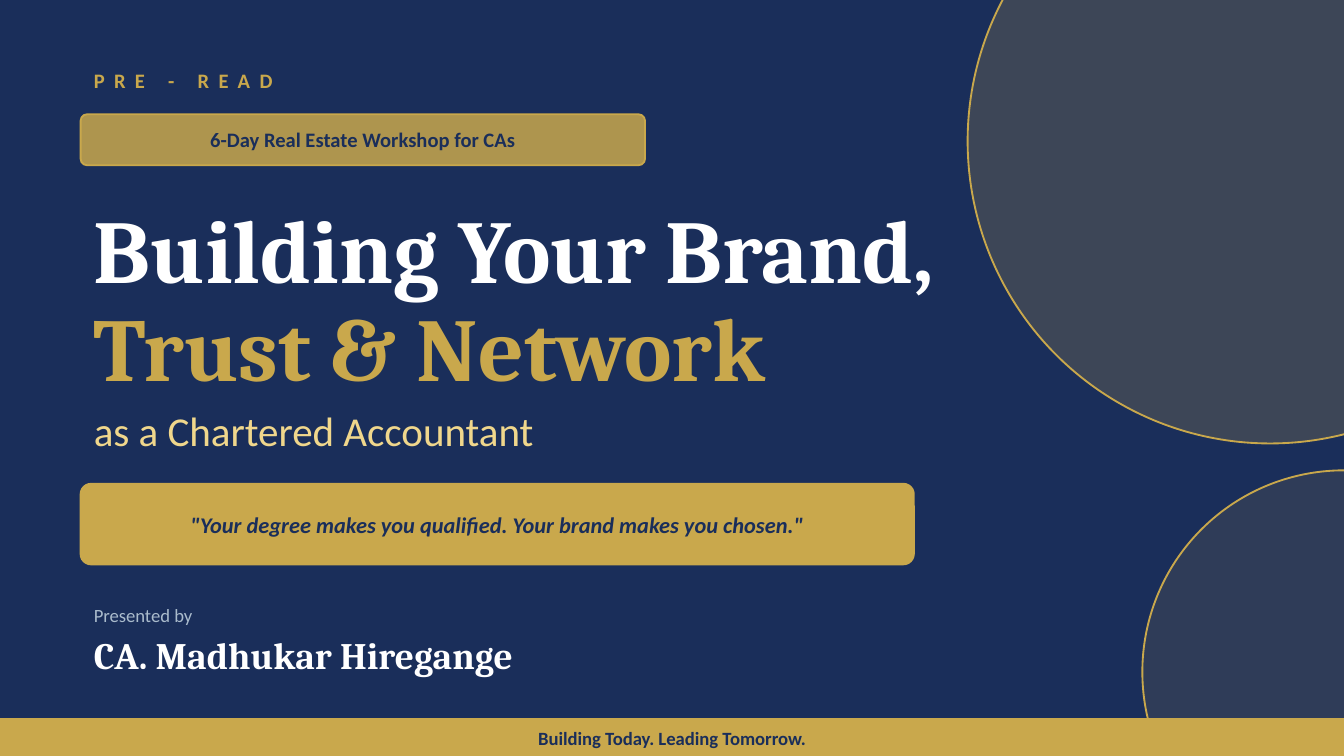
from lxml import etree
from pptx import Presentation
from pptx.dml.color import RGBColor
from pptx.enum.shapes import MSO_SHAPE
from pptx.enum.text import MSO_ANCHOR, PP_ALIGN
from pptx.oxml.ns import qn
from pptx.util import Pt

OVAL, ROUND, RECT = MSO_SHAPE.OVAL, MSO_SHAPE.ROUNDED_RECTANGLE, MSO_SHAPE.RECTANGLE
MIDDLE, LEFT, CENTER = MSO_ANCHOR.MIDDLE, PP_ALIGN.LEFT, PP_ALIGN.CENTER
SCALE = 4572
WIDE, HIGH = 2000, 1125
EDGE = 120
SANS, SERIF = "Calibri", "Cambria"
COLORS = {
    "navy": "1A2E5A",
    "gold": "C9A84C",
    "cream": "F0D78C",
    "white": "FFFFFF",
    "mist": "AABBCC",
}


def px(*nums):
    return [round(num * SCALE) for num in nums]


def tint(name):
    return RGBColor.from_string(COLORS[name])


def add_shape(slide, kind, box, alpha=100, round_by=None):
    shape = slide.shapes.add_shape(kind, *px(*box))
    shape.shadow.inherit = False
    shape.fill.solid()
    shape.fill.fore_color.rgb = tint("gold")
    shape.line.color.rgb = tint("gold")
    shape.line.width = Pt(1)
    if round_by is not None:
        shape.adjustments[0] = round_by
    if alpha < 100:
        color = shape.fill._xPr.find(qn("a:solidFill"))[0]
        etree.SubElement(color, qn("a:alpha")).set("val", str(alpha * 1000))


def add_text(slide, box, text, size, color, face=SANS, align=LEFT, inset=True, gap=0, **style):
    frame = slide.shapes.add_textbox(*px(*box)).text_frame
    frame.word_wrap = True
    frame.vertical_anchor = MIDDLE
    if not inset:
        for side in ("left", "top", "right", "bottom"):
            setattr(frame, f"margin_{side}", 0)
    para = frame.paragraphs[0]
    para.alignment = align
    run = para.add_run()
    run.text = text
    for key, value in {"name": face, "size": Pt(size), **style}.items():
        setattr(run.font, key, value)
    run.font.color.rgb = tint(color)
    if gap:
        run.font._element.set("spc", str(gap * 100))


def add_band(slide, kind, box, text, size, alpha=100, round_by=None, **style):
    add_shape(slide, kind, box, alpha, round_by)
    add_text(slide, box, text, size, "navy", align=CENTER, inset=False, bold=True, **style)


def main():
    deck = Presentation()
    deck.slide_width, deck.slide_height = px(WIDE, HIGH)
    slide = deck.slides.add_slide(deck.slide_layouts[6])
    slide.background.fill.solid()
    slide.background.fill.fore_color.rgb = tint("navy")

    add_shape(slide, OVAL, (1440, -240, 900, 900), alpha=20)
    add_shape(slide, OVAL, (1700, 700, 600, 600), alpha=12)

    add_text(slide, (EDGE, 90, 700, 60), "PRE - READ", 11, "gold", gap=5, bold=True)
    add_band(slide, ROUND, (EDGE, 170, 840, 76), "6-Day Real Estate Workshop for CAs", 11,
             alpha=85, round_by=0.13)

    titles = (("Building Your Brand,", "white"), ("Trust & Network", "gold"))
    for row, (text, color) in enumerate(titles):
        add_text(slide, (EDGE, 290 + 146 * row, 1600, 156), text, 48, color, SERIF, bold=True)
    add_text(slide, (EDGE, 590, 1600, 100), "as a Chartered Accountant", 22, "cream")

    add_band(slide, ROUND, (EDGE, 720, 1240, 120),
             '"Your degree makes you qualified. Your brand makes you chosen."', 12,
             round_by=0.13, italic=True)

    add_text(slide, (EDGE, 890, 800, 50), "Presented by", 10, "mist")
    add_text(slide, (EDGE, 936, 1100, 76), "CA. Madhukar Hiregange", 20, "white", SERIF, bold=True)
    add_band(slide, RECT, (0, 1070, WIDE, 56), "Building Today. Leading Tomorrow.", 10)

    deck.save("out.pptx")


if __name__ == "__main__":
    main()
